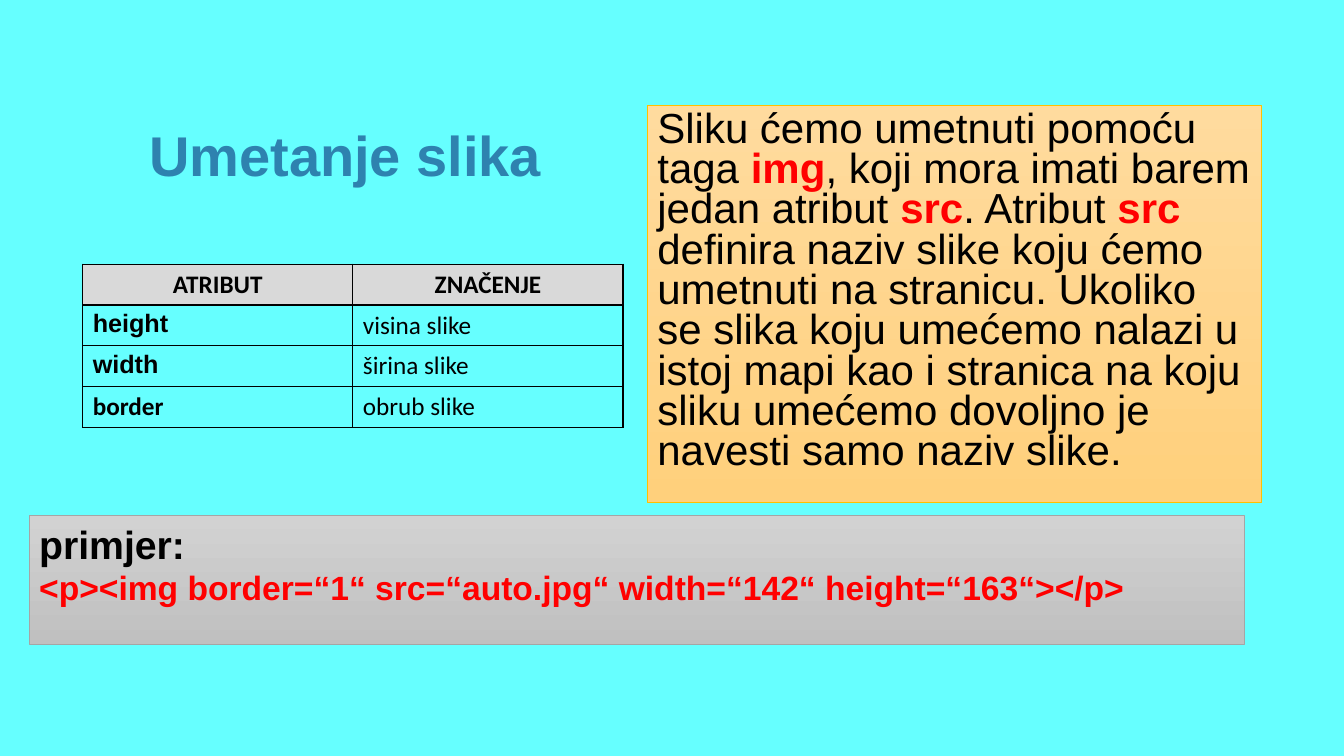
from lxml.etree import SubElement
from pptx import Presentation
from pptx.dml.color import RGBColor
from pptx.enum.shapes import MSO_SHAPE as Shape
from pptx.enum.text import MSO_ANCHOR as Anchor, MSO_AUTO_SIZE as AutoSize, PP_ALIGN as Align
from pptx.oxml.ns import qn
from pptx.util import Inches, Pt

BLACK = "000000"
RED = "FF0000"


def color(value):
    return RGBColor.from_string(value)


def add_run(paragraph, text, size=18, name="Arial", fill=BLACK, bold=False):
    run = paragraph.add_run()
    run.text = text
    run.font.size = Pt(size)
    run.font.name = name
    run.font.bold = bold
    run.font.color.rgb = color(fill)


def place(shape, left, top, width, height):
    shape.left, shape.top = Inches(left), Inches(top)
    shape.width, shape.height = Inches(width), Inches(height)


def prepare_text(shape, anchor=Anchor.TOP):
    frame = shape.text_frame
    frame.word_wrap = True
    frame.auto_size = AutoSize.NONE
    frame.vertical_anchor = anchor
    paragraph = frame.paragraphs[0]
    paragraph.alignment = Align.LEFT
    return paragraph


def style_panel(shape, first, last, outline):
    shape.fill.gradient()
    shape.fill.gradient_angle = 270
    for stop, value in zip(shape.fill.gradient_stops, (first, last)):
        stop.color.rgb = color(value)
    shape.line.color.rgb = color(outline)
    shape.line.width = Pt(0.5)


def fill_title(title):
    place(title, 1.38, 1.17, 4.8, 1.45)
    paragraph = prepare_text(title, Anchor.MIDDLE)
    title.text_frame.margin_bottom = Inches(0.7)
    paragraph.line_spacing = 0.9
    add_run(paragraph, "Umetanje slika", size=40, fill="2E82AF", bold=True)


def fill_explanation(body):
    place(body, 6.42, 1.05, 6.09, 3.93)
    style_panel(body, "FFDB9E", "FFD07C", "FFC000")
    paragraph = prepare_text(body)
    paragraph.line_spacing = 0.8
    paragraph.space_before = Pt(10)
    properties = paragraph._p.get_or_add_pPr()
    properties.set("marL", "0")
    properties.set("indent", "0")
    SubElement(properties, qn("a:buNone"))
    parts = (
        "Sliku ćemo umetnuti pomoću taga ", "img",
        ", koji mora imati barem jedan atribut ", "src",
        ". Atribut ", "src",
        " definira naziv slike koju ćemo umetnuti na stranicu. Ukoliko se slika "
        "koju umećemo nalazi u istoj mapi kao i stranica na koju sliku umećemo "
        "dovoljno je navesti samo naziv slike.",
    )
    for index, text in enumerate(parts):
        keyword = index % 2 == 1
        add_run(paragraph, text, size=30, fill=RED if keyword else BLACK, bold=keyword)


def add_borders(cell):
    properties = cell._tc.get_or_add_tcPr()
    for position, side in enumerate(("a:lnL", "a:lnR", "a:lnT", "a:lnB")):
        line = SubElement(properties, qn(side), w=str(Pt(1)))
        solid = SubElement(line, qn("a:solidFill"))
        SubElement(solid, qn("a:srgbClr"), val=BLACK)
        properties.remove(line)
        properties.insert(position, line)


def add_attribute_table(slide):
    rows = (
        ("ATRIBUT", "ZNAČENJE"),
        ("height", "visina slike"),
        ("width", "širina slike"),
        ("border", "obrub slike"),
    )
    table = slide.shapes.add_table(
        len(rows), 2, Inches(0.82), Inches(2.62), Inches(5.36), Inches(1.62)
    ).table
    table.horz_banding = False
    for row_index, row in enumerate(rows):
        for column_index, text in enumerate(row):
            header = row_index == 0
            attribute = column_index == 0
            arial = text in ("height", "width")
            cell = table.cell(row_index, column_index)
            if header:
                cell.fill.solid()
                cell.fill.fore_color.rgb = color("D9D9D9")
            else:
                cell.fill.background()
            paragraph = cell.text_frame.paragraphs[0]
            paragraph.alignment = Align.CENTER if header else Align.LEFT
            add_run(paragraph, text, name="Arial" if arial else "Calibri", bold=header or attribute)
            add_borders(cell)


def add_example(slide):
    panel = slide.shapes.add_shape(
        Shape.RECTANGLE, Inches(0.29), Inches(5.11), Inches(12.05), Inches(1.28)
    )
    panel.shadow.inherit = False
    style_panel(panel, "D2D2D2", "C0C0C0", "A5A5A5")
    add_run(prepare_text(panel), "primjer:", size=28, bold=True)
    code = panel.text_frame.add_paragraph()
    code.alignment = Align.LEFT
    add_run(
        code,
        "<p><img border=“1“ src=“auto.jpg“ width=“142“ height=“163“></p>",
        size=24, fill=RED, bold=True,
    )


def main():
    presentation = Presentation()
    presentation.slide_width = Inches(13.33)
    presentation.slide_height = Inches(7.5)
    slide = presentation.slides.add_slide(presentation.slide_layouts[1])
    slide.background.fill.solid()
    slide.background.fill.fore_color.rgb = color("66FFFF")
    fill_title(slide.shapes.title)
    fill_explanation(slide.placeholders[1])
    add_attribute_table(slide)
    add_example(slide)
    presentation.save("out.pptx")


if __name__ == "__main__":
    main()
